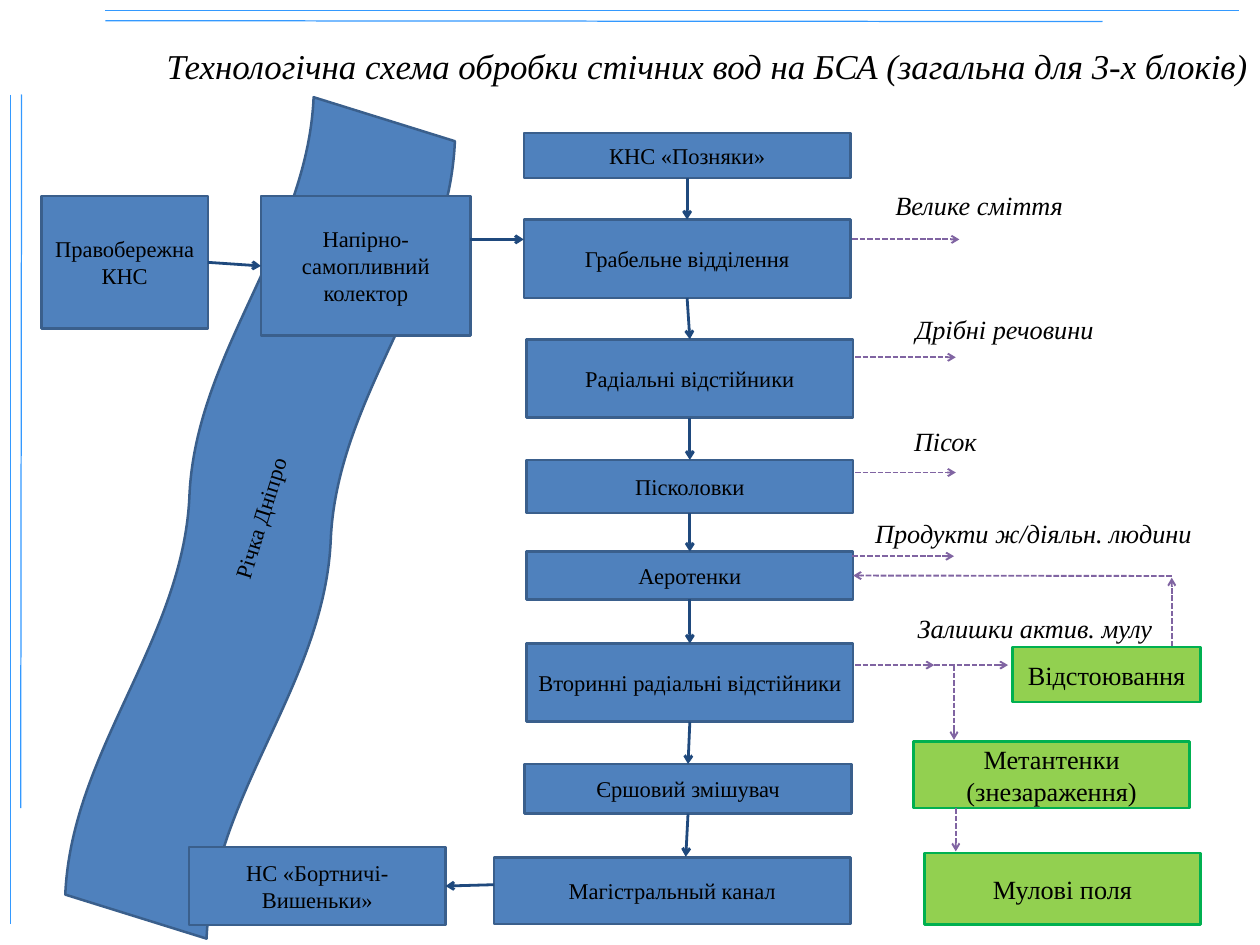
import pptx
import pptx.dml.color
import pptx.enum.dml
import pptx.enum.shapes
import pptx.enum.text
import pptx.oxml
import pptx.util
from pptx.util import Inches

SHAPES = pptx.enum.shapes.MSO_SHAPE
ALIGN = pptx.enum.text.PP_ALIGN
TOP, LEFT, BOTTOM, RIGHT = range(4)
BLUE = ("4F81BD", "3A5F8C")
GREEN = ("92D050", "00B050")


def color(hex_value):
    """Turn a hex string into an RGB colour."""
    return pptx.dml.color.RGBColor.from_string(hex_value)


def write(shape, text, size=18, italic=False, align=ALIGN.CENTER, wrap=True, inset=(0.1, 0.05)):
    """Put formatted, vertically centred text into a shape."""
    frame = shape.text_frame
    frame.word_wrap = wrap
    frame.vertical_anchor = pptx.enum.text.MSO_ANCHOR.MIDDLE
    frame.margin_left = frame.margin_right = Inches(inset[0])
    frame.margin_top = frame.margin_bottom = Inches(inset[1])
    paragraph = frame.paragraphs[0]
    paragraph.alignment = align
    run = paragraph.add_run()
    run.text = text
    run.font.name = "Times New Roman"
    run.font.size = pptx.util.Pt(size)
    run.font.italic = italic
    run.font.color.rgb = color("000000")


def add_label(slide, text, at, size=21, inset=(0.1, 0.05)):
    """Add right-aligned italic text."""
    label = slide.shapes.add_textbox(*map(Inches, at))
    write(label, text, size=size, italic=True, align=ALIGN.RIGHT, inset=inset)


def add_block(slide, text, at, colors=BLUE, kind=SHAPES.RECTANGLE, **text_format):
    """Add a filled, outlined shape with text."""
    block = slide.shapes.add_shape(kind, *map(Inches, at))
    block.shadow.inherit = False
    block.fill.solid()
    block.fill.fore_color.rgb = color(colors[0])
    block.line.color.rgb = color(colors[1])
    block.line.width = pptx.util.Pt(2)
    write(block, text, **text_format)
    return block


def add_line(slide, start, end, line_color, width):
    """Add a plain straight line."""
    line = slide.shapes.add_connector(
        pptx.enum.shapes.MSO_CONNECTOR.STRAIGHT, *map(Inches, (*start, *end)))
    line.line.color.rgb = color(line_color)
    line.line.width = pptx.util.Pt(width)
    pptx.oxml.xmlchemy.OxmlElement
    line._element.spPr.append(pptx.oxml.xmlchemy.OxmlElement("a:effectLst"))
    return line


def add_arrow(slide, start=(0, 0), end=(0, 0), source=None, target=None, dashed=False):
    """Add an arrow; source and target are (block, side) joints."""
    arrow = add_line(slide, start, end, *(("8064A2", 1.5) if dashed else ("1F497D", 2.25)))
    if dashed:
        arrow.line.dash_style = pptx.enum.dml.MSO_LINE.SQUARE_DOT
    head = pptx.oxml.xmlchemy.OxmlElement("a:tailEnd")
    head.set("type", "arrow")
    arrow.line._get_or_add_ln().append(head)
    if source:
        arrow.begin_connect(*source)
    if target:
        arrow.end_connect(*target)


def add_frame_and_title(slide):
    """Add the thin border lines and the heading."""
    for start, end in [((1.17, 0.12), (13.77, 0.12)), ((1.17, 0.23), (12.25, 0.24)),
                       ((0.12, 1.05), (0.12, 10.27)), ((0.24, 1.05), (0.23, 8.98))]:
        add_line(slide, start, end, "3399FF", 1)
    add_label(slide, "Технологічна схема обробки стічних вод на БСА (загальна для 3-х блоків)",
              (1.4, 0.23, 12.6, 0.99), size=27.9, inset=(0.14, 0.07))


def add_river(slide):
    """Add the wavy river band."""
    river = add_block(slide, "Річка Дніпро", (-1.75, 4.81, 9.28, 1.89),
                      kind=SHAPES.DOUBLE_WAVE, wrap=False, inset=(0.13, 0.07))
    river.adjustments[0] = 0.065
    river.adjustments[1] = 0
    river.rotation = 287.3


def add_treatment_chain(slide):
    """Add the blue treatment stages and return the aeration stage."""
    right_bank = add_block(slide, "Правобережна КНС", (0.46, 2.18, 1.85, 1.47))
    collector = add_block(slide, "Напірно-самопливний колектор", (2.9, 2.18, 2.33, 1.55))
    stages = [add_block(slide, text, (left, top, 3.63, height)) for text, left, top, height in [
        ("КНС «Позняки»", 5.82, 1.48, 0.5),
        ("Грабельне відділення", 5.82, 2.44, 0.87),
        ("Радіальні відстійники", 5.85, 3.77, 0.87),
        ("Пісколовки", 5.85, 5.11, 0.59),
        ("Аеротенки", 5.85, 6.13, 0.53),
        ("Вторинні радіальні відстійники", 5.85, 7.15, 0.87),
        ("Єршовий змішувач", 5.83, 8.49, 0.55)]]
    pumping = add_block(slide, "НС «Бортничі-Вишеньки»", (2.1, 9.41, 2.85, 0.87))
    add_block(slide, "Магістральный канал", (5.49, 9.53, 3.96, 0.74))

    for upper, lower in zip(stages, stages[1:]):
        add_arrow(slide, source=(upper, BOTTOM), target=(lower, TOP))
    add_arrow(slide, start=(7.63, 9.04), end=(7.62, 9.52), source=(stages[-1], BOTTOM))
    add_arrow(slide, start=(5.49, 9.83), target=(pumping, RIGHT))
    add_arrow(slide, source=(right_bank, RIGHT), target=(collector, LEFT))
    add_arrow(slide, start=(5.22, 2.66), end=(5.82, 2.66))
    return stages[4]


def add_waste_outputs(slide):
    """Add the captions of removed matter with their dashed arrows."""
    for text, at, start, end, y in [
            ("Велике сміття", (9.41, 1.91, 2.5, 0.74), 9.47, 10.66, 2.66),
            ("Дрібні речовини", (9.38, 3.31, 2.87, 0.7), 9.5, 10.62, 3.97),
            ("Пісок", (9.64, 4.41, 1.31, 0.99), 9.5, 10.62, 5.25),
            ("Продукти ж/діяльн. людини", (9.48, 5.51, 3.86, 0.82), 9.47, 10.6, 6.18),
            ("Залишки актив. мулу", (9.5, 6.69, 3.4, 0.57), 9.5, 10.38, 7.39)]:
        add_label(slide, text, at)
        add_arrow(slide, (start, y), (end, y), dashed=True)


def add_sludge_line(slide, aeration):
    """Add the green sludge stages and the return flow to aeration."""
    for text, at in [("Відстоювання", (11.25, 7.19, 2.09, 0.61)),
                     ("Метантенки (знезараження)", (10.15, 8.24, 3.07, 0.74)),
                     ("Мулові поля", (10.27, 9.48, 3.07, 0.79))]:
        add_block(slide, text, at, colors=GREEN, size=21, inset=(0.13, 0.07))
    for start, end in [((10.38, 7.39), (11.2, 7.39)), ((10.6, 7.39), (10.6, 8.22)),
                       ((13.02, 7.18), (13.02, 6.42)), ((10.62, 8.98), (10.62, 9.46))]:
        add_arrow(slide, start, end, dashed=True)
    add_arrow(slide, start=(13.02, 6.4), target=(aeration, RIGHT), dashed=True)


def main():
    """Build and save the slide."""
    presentation = pptx.Presentation()
    presentation.slide_width = Inches(14)
    presentation.slide_height = Inches(10.5)
    slide = presentation.slides.add_slide(presentation.slide_layouts[6])
    add_frame_and_title(slide)
    add_river(slide)
    aeration = add_treatment_chain(slide)
    add_waste_outputs(slide)
    add_sludge_line(slide, aeration)
    presentation.save("out.pptx")


if __name__ == "__main__":
    main()
